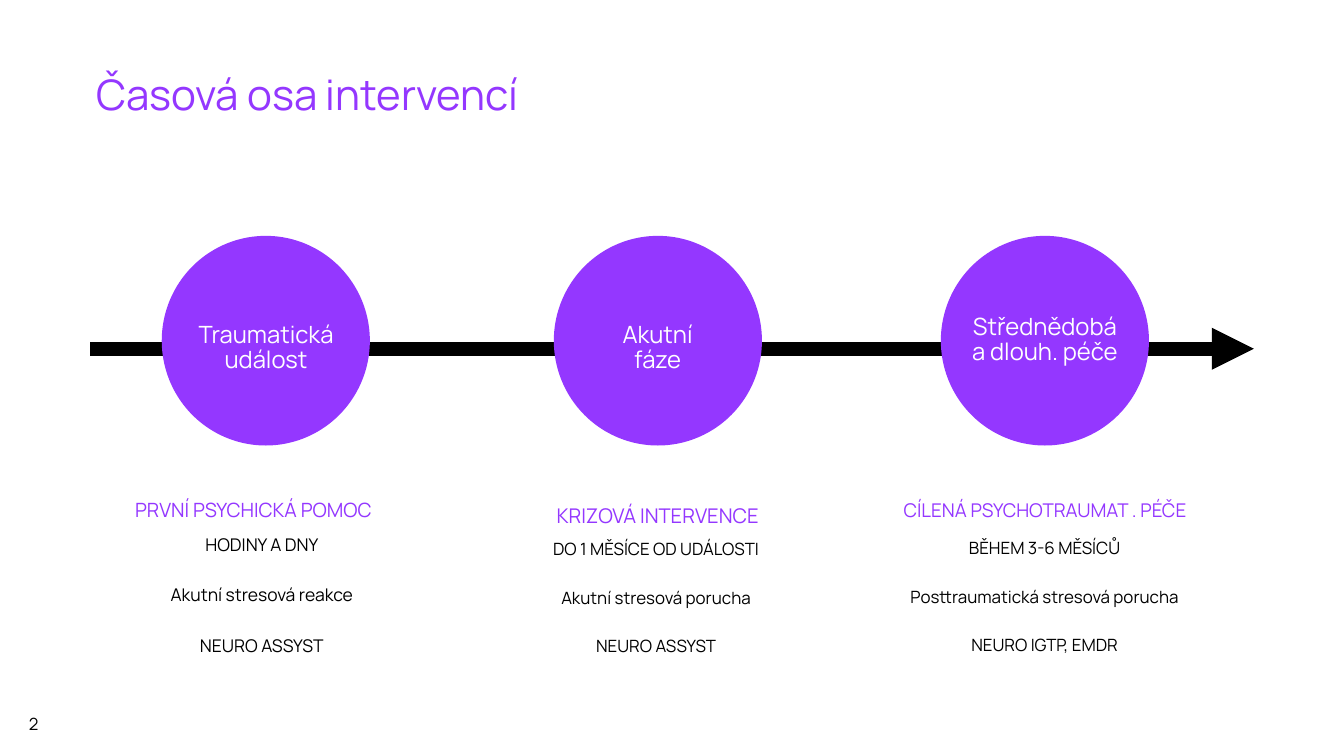
from dataclasses import dataclass

import pptx
import pptx.dml.color
import pptx.enum.shapes
import pptx.enum.text
import pptx.oxml.ns
import pptx.util
from lxml import etree
from pptx.util import Inches

ALIGN = pptx.enum.text.PP_ALIGN
ANCHOR = pptx.enum.text.MSO_ANCHOR
FIT = pptx.enum.text.MSO_AUTO_SIZE


@dataclass(frozen=True)
class Theme:
    font: str = "Manrope"
    purple: str = "9437FF"
    black: str = "000000"
    white: str = "FFFFFF"
    title: float = 60
    stage: float = 34
    number: float = 24
    axis: float = 20
    inset: float = 0.06
    circle_top: float = 4.68
    circle_size: tuple = (4.13, 4.16)


T = Theme()

# circle left, stage lines, label box (None: text sits in the circle)
STAGES = [
    (3.21, ["Traumatická", "událost"], (3.63, 6.18, 3.3, 1.48)),
    (10.99, ["Akutní", "fáze"], (12.18, 6.18, 1.74, 1.48)),
    (18.67, ["Střednědobá", "a dlouh. péče"], None),
]

# heading, box, size, alignment, anchor, wrap
HEADINGS = [
    ("PRVNÍ PSYCHICKÁ POMOC", (2.62, 9.59, 5.31, 0.82), 28.1, ALIGN.LEFT, ANCHOR.BOTTOM, True),
    ("KRIZOVÁ INTERVENCE", (10.81, 9.78, 4.48, 0.74), 28.9, ALIGN.CENTER, ANCHOR.BOTTOM, True),
    ("CÍLENÁ PSYCHOTRAUMAT . PÉČE", (17.66, 9.8, 6.15, 0.63), 27, ALIGN.CENTER, ANCHOR.MIDDLE, False),
]

# lines, box, size, space between paragraphs
DETAILS = [
    (["HODINY A DNY", "Akutní stresová reakce", "NEURO ASSYST"],
     (2.62, 10.58, 5.15, 3.05), 25, 45),
    (["DO 1 MĚSÍCE OD UDÁLOSTI", "Akutní stresová porucha", "NEURO ASSYST"],
     (10.81, 10.68, 4.42, 2.76), 24.2, 43),
    (["BĚHEM 3-6 MĚSÍCŮ", "Posttraumatická stresová porucha", "NEURO IGTP, EMDR"],
     (17.75, 10.66, 5.96, 2.76), 24.2, 43),
]


def rgb(value):
    return pptx.dml.color.RGBColor.from_string(value)


def write(tf, lines, size, color, align=ALIGN.CENTER, anchor=ANCHOR.TOP,
          wrap=True, gap=0, spacing=1.0, inset=T.inset):
    """Fill a text frame with one paragraph per line."""
    tf.auto_size = FIT.NONE if wrap else FIT.SHAPE_TO_FIT_TEXT
    tf.word_wrap = wrap
    tf.vertical_anchor = anchor
    tf.margin_left = tf.margin_right = Inches(inset)
    tf.margin_top = tf.margin_bottom = Inches(inset)
    for i, line in enumerate(lines):
        p = tf.paragraphs[0] if i == 0 else tf.add_paragraph()
        p.alignment = align
        p.line_spacing = spacing
        p.space_before = pptx.util.Pt(gap if i else 0)
        r = p.add_run()
        r.text = line
        r.font.name = T.font
        r.font.size = pptx.util.Pt(size)
        r.font.color.rgb = rgb(color)


def add_text(s, box, lines, size, color, **style):
    sp = s.shapes.add_textbox(*map(Inches, box))
    write(sp.text_frame, lines, size, color, **style)


def add_title(s, text):
    sp = s.shapes.title
    sp.left, sp.top, sp.width, sp.height = map(Inches, (1.85, 0.84, 22.97, 1.6))
    write(sp.text_frame, [text], T.title, T.purple, align=ALIGN.LEFT,
          anchor=ANCHOR.BOTTOM, spacing=0.9)


def add_axis(s, left, right, y):
    line = s.shapes.add_connector(pptx.enum.shapes.MSO_CONNECTOR.STRAIGHT,
                                  *map(Inches, (left, y, right, y)))
    line.line.color.rgb = rgb(T.black)
    line.line.width = pptx.util.Pt(T.axis)
    qn = pptx.oxml.ns.qn
    etree.SubElement(line.line._get_or_add_ln(), qn("a:tailEnd"), type="triangle")
    etree.SubElement(line._element.spPr, qn("a:effectLst"))


def add_stage(s, left, lines, label_box):
    sp = s.shapes.add_shape(pptx.enum.shapes.MSO_SHAPE.OVAL,
                            *map(Inches, (left, T.circle_top, *T.circle_size)))
    sp.shadow.inherit = False
    sp.fill.solid()
    sp.fill.fore_color.rgb = rgb(T.purple)
    sp.line.fill.background()
    style = dict(anchor=ANCHOR.MIDDLE, spacing=0.85)
    if label_box:
        add_text(s, label_box, lines, T.stage, T.white, wrap=False, **style)
    else:
        write(sp.text_frame, lines, T.stage, T.white, inset=0, **style)


def main():
    prs = pptx.Presentation()
    prs.slide_width, prs.slide_height = Inches(26.67), Inches(15)
    s = prs.slides.add_slide(prs.slide_layouts.get_by_name("Title Only"))

    add_title(s, "Časová osa intervencí")
    add_axis(s, 1.79, 24.88, 6.92)
    for stage in STAGES:
        add_stage(s, *stage)
    for text, box, size, align, anchor, wrap in HEADINGS:
        add_text(s, box, [text], size, T.purple, align=align, anchor=anchor, wrap=wrap)
    for lines, box, size, gap in DETAILS:
        add_text(s, box, lines, size, T.black, gap=gap, spacing=0.9)
    add_text(s, (0.51, 14.11, 0.32, 0.56), ["2"], T.number, T.black, wrap=False)

    prs.save("out.pptx")


if __name__ == "__main__":
    main()
